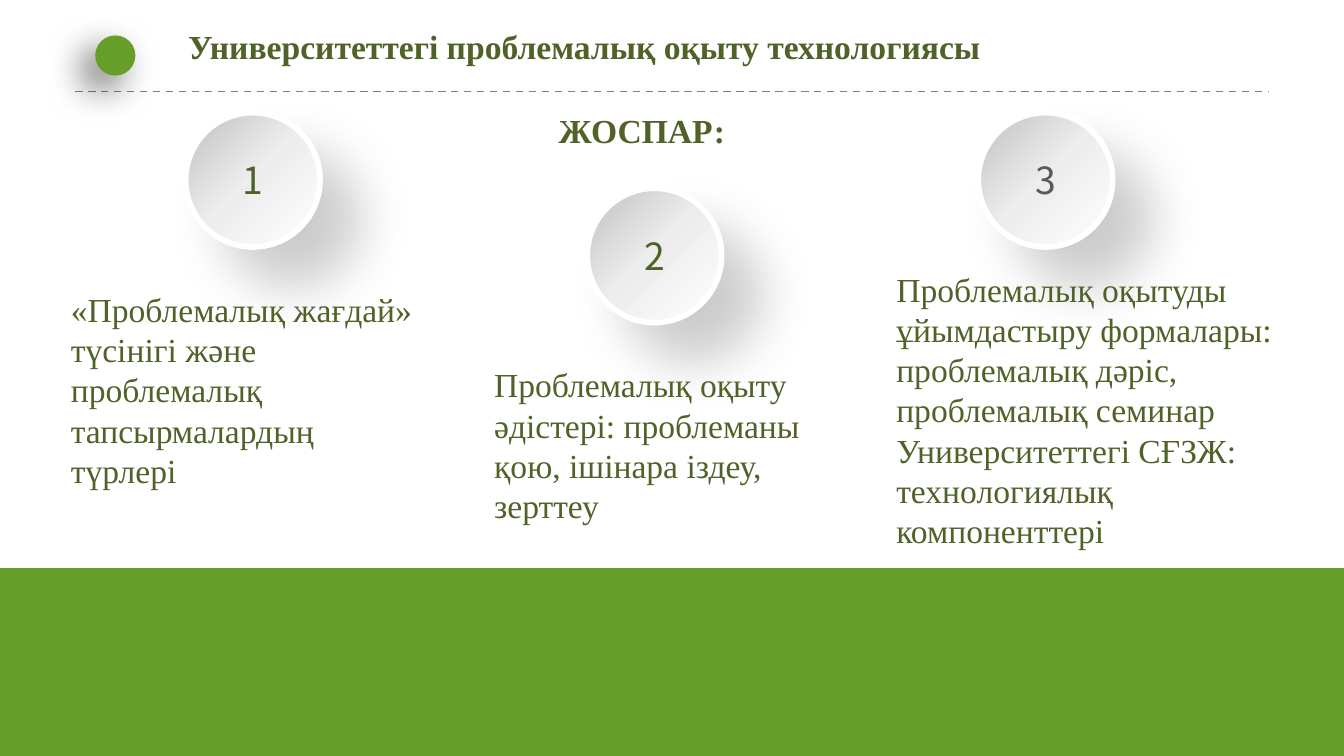
from lxml.etree import SubElement as Sub
from pptx import Presentation
from pptx.dml.color import RGBColor
from pptx.enum.dml import MSO_LINE
from pptx.enum.shapes import MSO_CONNECTOR, MSO_SHAPE
from pptx.enum.text import MSO_ANCHOR, MSO_AUTO_SIZE as FIT, PP_ALIGN
from pptx.oxml.ns import qn
from pptx.util import Cm, Pt

GREEN = RGBColor(0x67, 0x9E, 0x2A)
OLIVE = RGBColor(0x4F, 0x62, 0x28)
GRAY = RGBColor(0x80, 0x80, 0x80)
DARK = RGBColor(0x59, 0x59, 0x59)
WHITE = RGBColor(0xFF, 0xFF, 0xFF)
BLACK = RGBColor(0, 0, 0)
STOPS = [
    (0, RGBColor(0xC0, 0xC0, 0xC0)),
    (49, RGBColor(0xED, 0xED, 0xED)),
    (100, WHITE),
]
BODY = {"size": Pt(18), "name": "Times New Roman", "bold": False}
HEAD = {**BODY, "bold": True}
DIGIT = {"size": Pt(20), "name": "Noto Sans CJK SC", "bold": False}
SIZE = 2.54


class Deck:
    def __init__(self, wide, high):
        self.show = Presentation()
        self.show.slide_width, self.show.slide_height = Cm(wide), Cm(high)
        self.slide = self.show.slides.add_slide(self.show.slide_layouts[5])
        self.shapes = self.slide.shapes

    def label(self, frame, lines, style, color=OLIVE, align=PP_ALIGN.LEFT):
        frame.text = "\n".join(lines)
        for para in frame.paragraphs:
            para.alignment = align
            for run in para.runs:
                for key, value in style.items():
                    setattr(run.font, key, value)
                run.font.color.rgb = color

    def title(self, text, *box):
        title = self.shapes.title
        title.left, title.top, title.width, title.height = map(Cm, box)
        frame = title.text_frame
        self.label(frame, [text], HEAD)
        frame.vertical_anchor = MSO_ANCHOR.TOP
        frame.auto_size = FIT.NONE
        frame.word_wrap = False

    def text(self, lines, *box, style=BODY, wrap=True):
        frame = self.shapes.add_textbox(*map(Cm, box)).text_frame
        frame.word_wrap = wrap
        frame.auto_size = FIT.SHAPE_TO_FIT_TEXT
        self.label(frame, lines, style)

    def rule(self, *ends):
        line = self.shapes.add_connector(MSO_CONNECTOR.STRAIGHT, *map(Cm, ends))
        line.line.color.rgb = GRAY
        line.line.width = Pt(1)
        line.line.dash_style = MSO_LINE.DASH
        Sub(line._element.spPr, qn("a:effectLst"))

    def shape(self, kind, *box):
        shape = self.shapes.add_shape(kind, *map(Cm, box))
        shape.fill.solid()
        shape.fill.fore_color.rgb = GREEN
        shape.line.fill.background()
        shape.shadow.inherit = False
        return shape

    def shade(self, shape, alpha, blur, dist, angle):
        effect = shape._element.spPr.find(qn("a:effectLst"))
        outer = Sub(effect, qn("a:outerShdw"), blurRad=str(Pt(blur)),
                    dist=str(Pt(dist)), dir=str(angle * 60000),
                    algn="ctr", rotWithShape="0")
        self.tint(outer, BLACK, alpha)

    def tint(self, node, color, alpha=None):
        tone = Sub(node, qn("a:srgbClr"), val=str(color))
        if alpha:
            Sub(tone, qn("a:alpha"), val=str(alpha * 1000))

    def ball(self, text, left, top, color):
        ball = self.shape(MSO_SHAPE.OVAL, left, top, SIZE, SIZE)
        ball.fill.gradient()
        ball.fill.gradient_angle = 315
        stops = ball._element.spPr.find(qn("a:gradFill")).find(qn("a:gsLst"))
        stops[:] = []
        for place, shade in STOPS:
            self.tint(Sub(stops, qn("a:gs"), pos=str(place * 1000)), shade)
        ball.line.color.rgb = WHITE
        ball.line.width = Pt(3)
        self.shade(ball, 20, 29, 29, 45)
        frame = ball.text_frame
        frame.margin_left = frame.margin_right = 0
        frame.margin_top = frame.margin_bottom = Cm(0.1)
        frame.vertical_anchor = MSO_ANCHOR.MIDDLE
        self.label(frame, [text], DIGIT, color, PP_ALIGN.CENTER)


def main():
    deck = Deck(25.4, 14.29)
    deck.title("Университеттегі проблемалық оқыту технологиясы",
               3.3, 0.36, 15.65, 1.8)
    deck.rule(1.42, 1.73, 23.98, 1.73)
    dot = deck.shape(MSO_SHAPE.OVAL, 1.8, 0.67, 0.76, 0.76)
    deck.shade(dot, 60, 20, 10, 135)
    deck.shape(MSO_SHAPE.RECTANGLE, 0, 10.74, 25.4, 3.55)

    balls = [(3.51, 2.13, OLIVE), (11.1, 3.56, OLIVE), (18.49, 2.13, DARK)]
    for num, (left, top, color) in enumerate(balls, 1):
        deck.ball(str(num), left, top, color)

    deck.text(["«Проблемалық жағдай» түсінігі және проблемалық "
               "тапсырмалардың түрлері"], 1.09, 5.33, 7.19, 4.88)
    deck.text(["Проблемалық оқыту әдістері: проблеманы қою, ішінара "
               "іздеу, зерттеу"], 9.09, 6.76, 7.11, 3.94)
    deck.text(["Проблемалық оқытуды ұйымдастыру формалары: проблемалық "
               "дәріс, проблемалық семинар",
               "Университеттегі СҒЗЖ: технологиялық компоненттері"],
              16.69, 4.95, 8.2, 6.25)
    deck.text(["ЖОСПАР:"], 10.31, 1.96, 3.68, 1.02, style=HEAD, wrap=False)
    deck.show.save("out.pptx")


if __name__ == "__main__":
    main()
